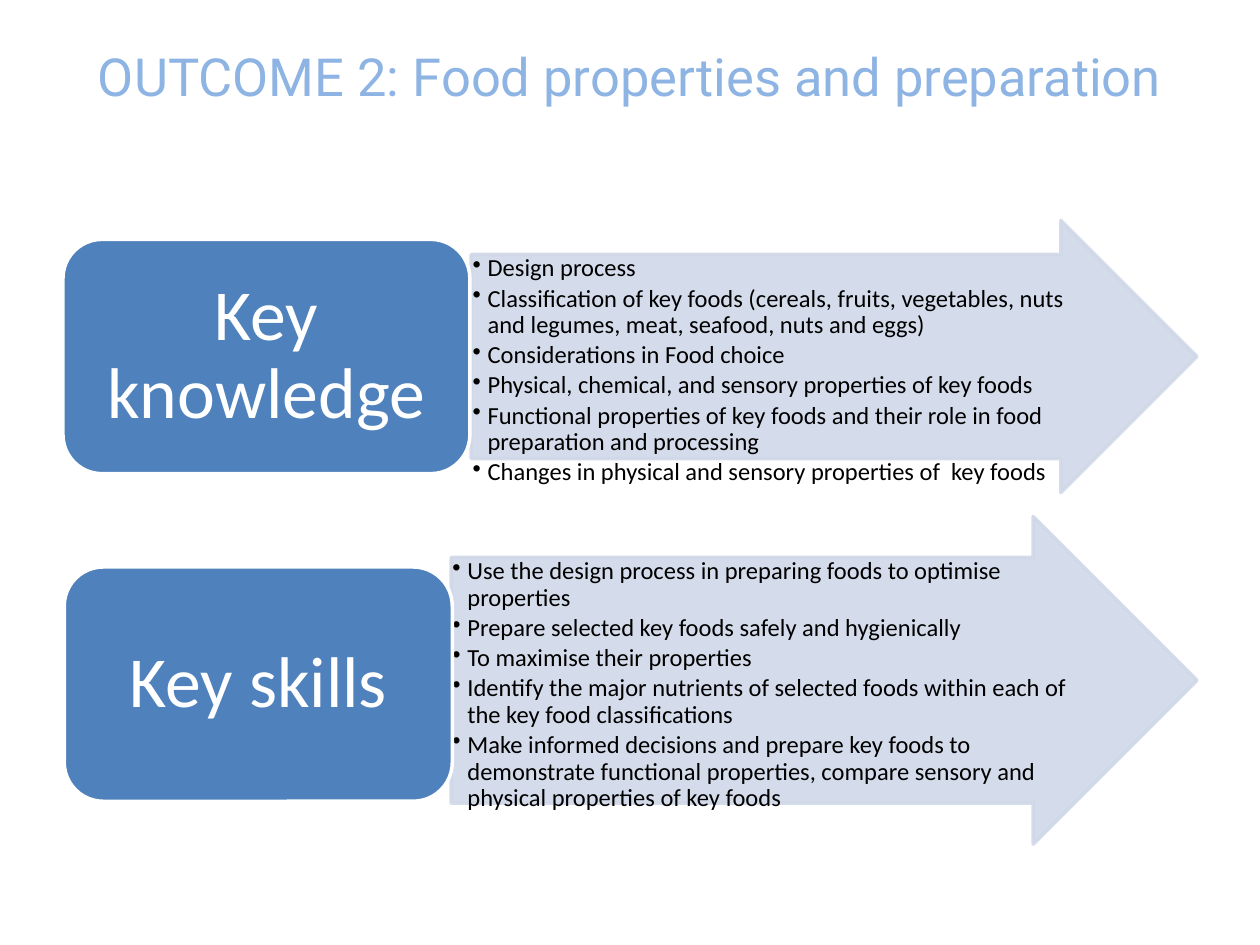
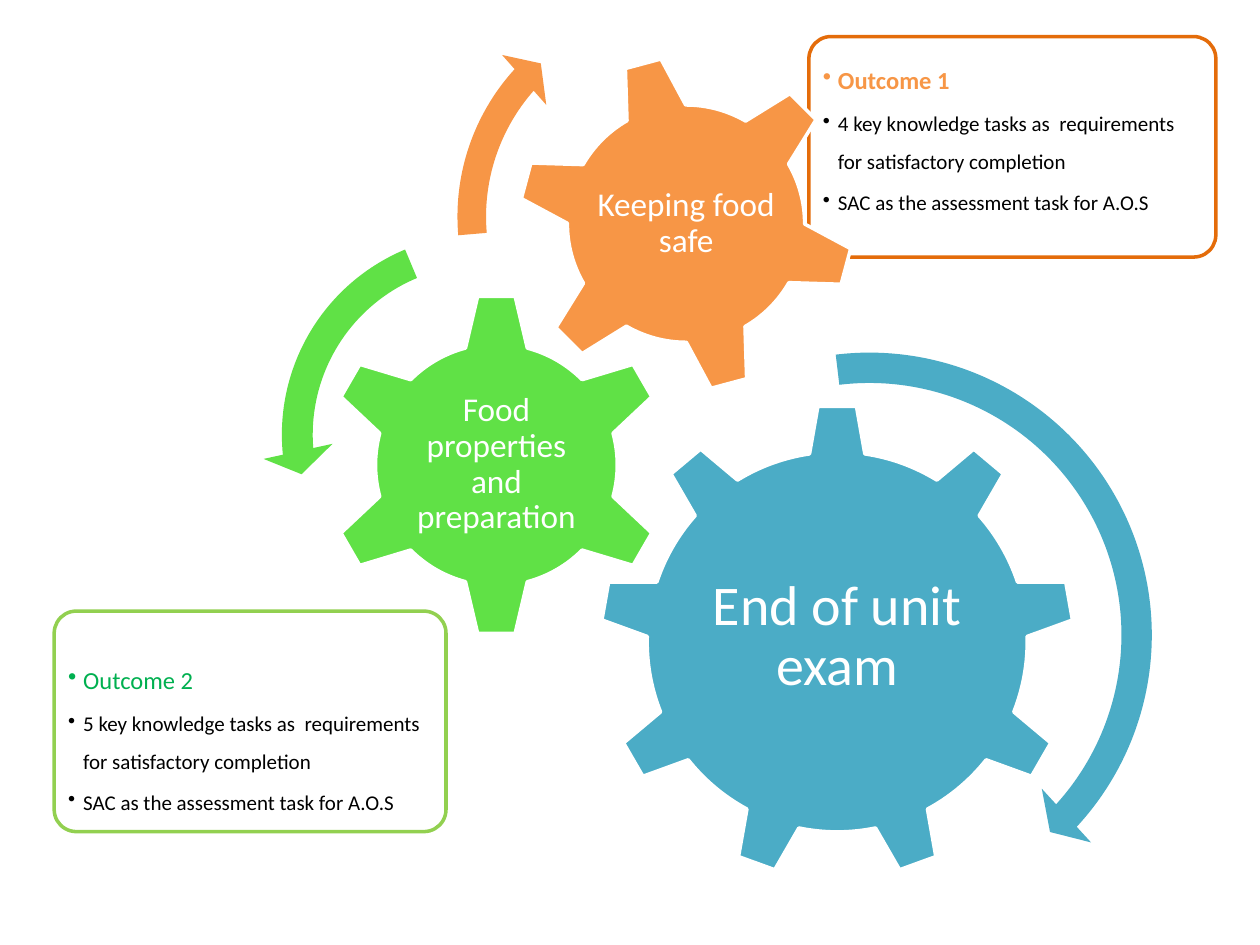
from dataclasses import dataclass
from typing import NamedTuple

from lxml import etree
from pptx import Presentation
from pptx import util as u
from pptx.dml.color import RGBColor
from pptx.enum import shapes, text
from pptx.oxml import ns

# Shared look: a grid of 100 columns by 75 rows covers the slide
WIDTH, HEIGHT = u.Inches(10), u.Inches(7.5)
COLUMN, ROW = WIDTH / 100, HEIGHT / 75
COLOURS = {
    "title": "8EB4E3", "white": "FFFFFF", "black": "000000",
    "box": "4F81BD", "arrow": "D0D8E8",
    "teal": "4BACC6", "lime": "60E146", "orange": "F79646",
    "orange edge": "E46C0A", "lime edge": "92D050", "green": "00B050",
}
BODY_FONT, TITLE_FONT = "Calibri", "Roboto"
LINE_WIDTH = 2
SEE_THROUGH = 90
CORNER_SHARE = 0.29  # part of a corner radius that text keeps clear of
Shape = shapes.MSO_SHAPE


class Area(NamedTuple):
    """Place on the grid, in columns and rows."""
    left: float
    top: float
    width: float
    height: float

    def inset(self, gap: float) -> "Area":
        return Area(self.left + gap, self.top + gap,
                    self.width - 2 * gap, self.height - 2 * gap)

    def lengths(self) -> list[int]:
        return [round(size * unit) for size, unit in zip(self, (COLUMN, ROW) * 2)]


class Line(NamedTuple):
    """One paragraph."""
    words: str
    size: float
    colour: str = "black"
    bold: bool = False


@dataclass
class Topic:
    label: str
    box: Area
    arrow: Area
    points: list[str]


@dataclass
class Gear:
    kind: Shape
    area: Area
    label: str
    label_area: Area
    colour: str
    size: float
    margin: float = 0.3
    rotation: float = 0


@dataclass
class Panel:
    area: Area
    edge: str
    heading: Line
    tasks: str
    top_margin: float = 0.6


@dataclass
class Turn:
    kind: Shape
    area: Area
    colour: str
    adjustments: tuple[float, ...]


TOPICS = [
    Topic("Key knowledge", Area(5, 19, 32.3, 18.6), Area(37.4, 17.5, 57.6, 21.6), [
        "Design process",
        "Classification of key foods (cereals, fruits, vegetables, nuts and legumes, "
        "meat, seafood, nuts and eggs)",
        "Considerations in Food choice",
        "Physical, chemical, and sensory properties of key foods",
        "Functional properties of key foods and their role in food preparation "
        "and processing",
        "Changes in physical and sensory properties of  key foods",
    ]),
    Topic("Key skills", Area(5.1, 45, 30.8, 18.6), Area(35.8, 41, 59.2, 26), [
        "Use the design process in preparing foods to optimise properties",
        "Prepare selected key foods safely and hygienically",
        "To maximise their properties",
        "Identify the major nutrients of selected foods within each of the key food "
        "classifications",
        "Make informed decisions and prepare key foods to demonstrate functional "
        "properties, compare sensory and physical properties of key foods",
    ]),
]

# Back to front
MACHINE = [
    Gear(Shape.GEAR_9, Area(47.6, 32.1, 37.7, 37.7), "End of unit exam",
         Area(55.2, 40.9, 22.5, 19.4), "teal", 32, 0.4),
    Panel(Area(64.2, 2.9, 32.3, 17.5), "orange edge",
          Line("Outcome 1", 14, "orange", True),
          "4 key knowledge tasks as  requirements for satisfactory completion"),
    Gear(Shape.GEAR_6, Area(25.7, 23.2, 27.4, 27.4), "Food properties and preparation",
         Area(32.6, 30.1, 13.6, 13.5), "lime", 19),
    Panel(Area(4.3, 48.5, 31.1, 17.5), "lime edge",
          Line("Outcome 2", 14, "green"),
          "5 key knowledge tasks as  requirements for satisfactory completion", 2.6),
    Gear(Shape.GEAR_6, Area(41, 4.3, 26.9, 26.9), "Keeping food safe",
         Area(46.9, 10.2, 15.1, 15.1), "orange", 19, rotation=345),
    Turn(Shape.CIRCULAR_ARROW, Area(44.9, 26.3, 48.2, 48.2), "teal",
         (0.05, 2.99, 25.5, 157.89, 0.06)),
    Turn(Shape.LEFT_CIRCULAR_ARROW, Area(20.8, 17, 35, 35), "lime",
         (0.07, 4.3, 104.89, 148.38, 0.08)),
    Turn(Shape.CIRCULAR_ARROW, Area(34.8, -1.7, 37.8, 37.8), "orange",
         (0.06, 3.94, 133.14, 105.08, 0.07)),
]


# Drawing helpers
def rgb(name: str) -> RGBColor:
    return RGBColor.from_string(COLOURS[name])


def fade(properties) -> None:
    """Let the colour in a fill or a line show through a little."""
    for colour in properties.iter(ns.qn("a:srgbClr")):
        etree.SubElement(colour, ns.qn("a:alpha"), val=str(SEE_THROUGH * 1000))


def add_figure(slide, kind: Shape, area: Area, fill: str, line: str | None = "white",
               adjustments: tuple[float, ...] = (), rotation: float = 0):
    shape = slide.shapes.add_shape(kind, *area.lengths())
    shape.shadow.inherit = False
    shape.rotation = rotation
    for index, value in enumerate(adjustments):
        shape.adjustments[index] = value
    shape.fill.solid()
    shape.fill.fore_color.rgb = rgb(fill)
    if line:
        shape.line.color.rgb = rgb(line)
        shape.line.width = u.Pt(LINE_WIDTH)
    else:
        shape.line.fill.background()
    return shape


def add_text(slide, area: Area, lines: list[Line], margins: tuple[float, float],
             bullets: bool = False, spacing: float = 0.9, font: str = BODY_FONT):
    """Write bullets from the top, or a label in the middle."""
    frame = slide.shapes.add_textbox(*area.lengths()).text_frame
    frame.word_wrap = True
    frame.vertical_anchor = text.MSO_ANCHOR.TOP if bullets else text.MSO_ANCHOR.MIDDLE
    frame.margin_left = frame.margin_right = round(margins[0] * COLUMN)
    frame.margin_top = frame.margin_bottom = round(margins[1] * ROW)
    for index, line in enumerate(lines):
        paragraph = frame.paragraphs[0] if index == 0 else frame.add_paragraph()
        paragraph.text = line.words
        paragraph.line_spacing = spacing
        if bullets:
            paragraph.level = 1
            paragraph.space_after = u.Pt(0.15 * line.size)
            add_bullet(paragraph)
        else:
            paragraph.alignment = text.PP_ALIGN.CENTER
        paragraph.font.name = font
        paragraph.font.size = u.Pt(line.size)
        paragraph.font.bold = line.bold
        paragraph.font.color.rgb = rgb(line.colour)
    return frame


def add_bullet(paragraph) -> None:
    properties = paragraph._p.get_or_add_pPr()
    indent = u.Inches(0.12)
    properties.set("marL", str(indent))
    properties.set("indent", str(-indent))
    etree.SubElement(properties, ns.qn("a:buChar"), char="•")


# Parts of the slides
def draw_topic(slide, topic: Topic) -> None:
    arrow = topic.arrow
    shape = add_figure(slide, Shape.RIGHT_ARROW, arrow, "arrow", "arrow", (0.75, 0.5))
    fade(shape._element.spPr)
    shaft = Area(arrow.left, arrow.top + arrow.height / 8,
                 arrow.width - arrow.height * 3 / 8, arrow.height * 3 / 4)
    add_text(slide, shaft, [Line(point, 14) for point in topic.points],
             (0.1, 0.1), bullets=True)
    add_figure(slide, Shape.ROUNDED_RECTANGLE, topic.box, "box")
    add_text(slide, topic.box.inset(CORNER_SHARE * topic.box.height / 6),
             [Line(topic.label, 41, "white")], (1.7, 0.9))


def draw_gear(slide, gear: Gear) -> None:
    add_figure(slide, gear.kind, gear.area, gear.colour, rotation=gear.rotation)
    add_text(slide, gear.label_area, [Line(gear.label, gear.size, "white")],
             (gear.margin, gear.margin))


def draw_panel(slide, panel: Panel) -> None:
    corner = 0.1
    shape = add_figure(slide, Shape.ROUNDED_RECTANGLE, panel.area, "white",
                       panel.edge, (corner,))
    fade(shape.fill._xPr.find(ns.qn("a:solidFill")))
    lines = [panel.heading, Line(panel.tasks, 12),
             Line("SAC as the assessment task for A.O.S", 12)]
    frame = add_text(slide, panel.area.inset(CORNER_SHARE * corner * panel.area.height),
                     lines, (0.6, 0.6), bullets=True, spacing=1.5)
    frame.margin_top = round(panel.top_margin * ROW)


def draw_turn(slide, turn: Turn) -> None:
    add_figure(slide, turn.kind, turn.area, turn.colour, None, turn.adjustments)


DRAW = {Gear: draw_gear, Panel: draw_panel, Turn: draw_turn}


def main() -> None:
    presentation = Presentation()
    presentation.slide_width, presentation.slide_height = WIDTH, HEIGHT
    blank = presentation.slide_layouts[6]

    # Slide 1: knowledge and skills
    slide = presentation.slides.add_slide(blank)
    title = add_text(slide, Area(5, 3, 90, 12.5),
                     [Line("OUTCOME 2: Food properties and preparation", 30, "title")],
                     (1, 0.5), spacing=1.0, font=TITLE_FONT)
    title.vertical_anchor = text.MSO_ANCHOR.TOP
    for topic in TOPICS:
        draw_topic(slide, topic)

    # Slide 2: gears of the unit
    slide = presentation.slides.add_slide(blank)
    for part in MACHINE:
        DRAW[type(part)](slide, part)

    presentation.save("out.pptx")


if __name__ == "__main__":
    main()
